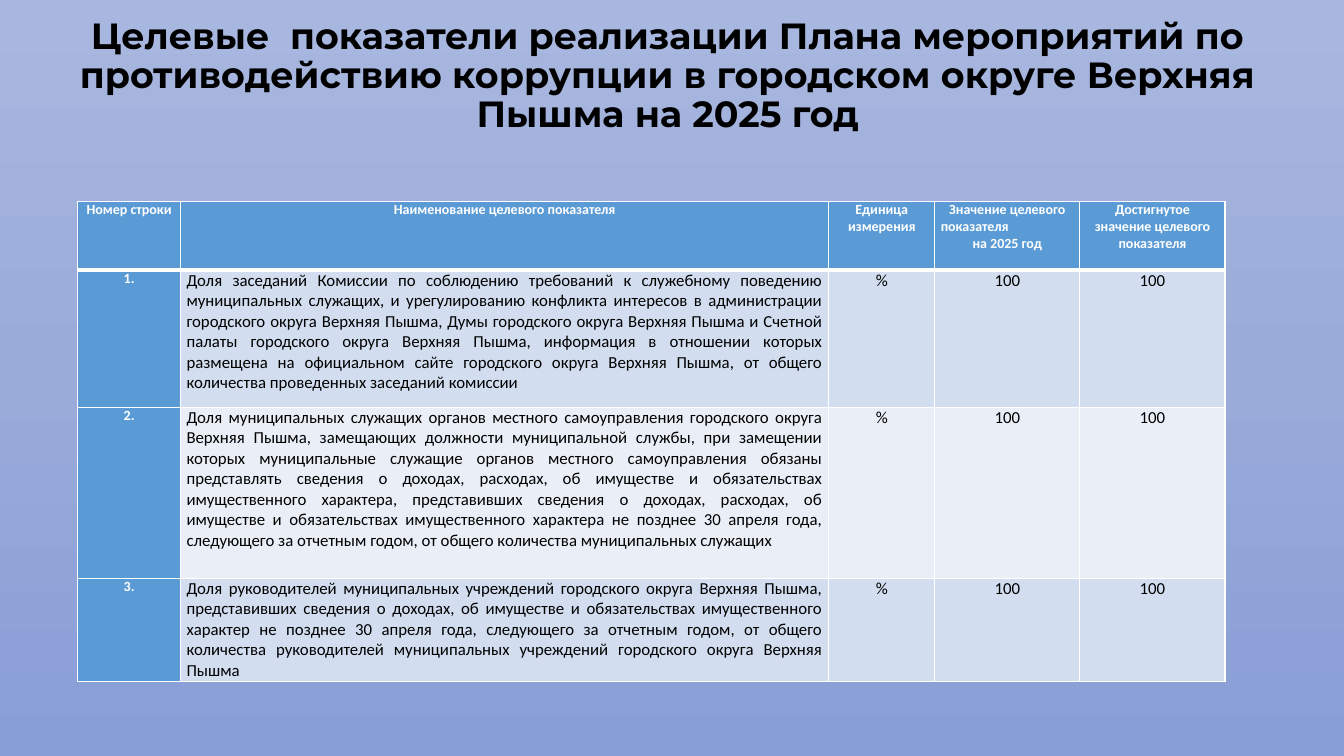
from copy import deepcopy

from lxml import etree
from pptx import Presentation
from pptx.dml.color import RGBColor
from pptx.enum.text import MSO_ANCHOR, MSO_AUTO_SIZE, PP_ALIGN
from pptx.oxml.ns import qn
from pptx.util import Inches, Pt

LEFT, CENTER, JUSTIFY = PP_ALIGN.LEFT, PP_ALIGN.CENTER, PP_ALIGN.JUSTIFY
MIDDLE, TOP = MSO_ANCHOR.MIDDLE, MSO_ANCHOR.TOP
NO_AUTOFIT = MSO_AUTO_SIZE.NONE

BLACK = RGBColor(0x00, 0x00, 0x00)
WHITE = RGBColor(0xFF, 0xFF, 0xFF)
BLUE = RGBColor(0x5B, 0x9B, 0xD5)
BAND_DARK = RGBColor(0xD2, 0xDE, 0xEF)
BAND_LIGHT = RGBColor(0xEA, 0xEF, 0xF7)
SKY = (RGBColor(0xA8, 0xB7, 0xDF), RGBColor(0x9A, 0xAB, 0xD9), RGBColor(0x88, 0x9E, 0xD7))

TITLE = ("Целевые  показатели реализации Плана мероприятий по противодействию "
         "коррупции в городском округе Верхняя Пышма на 2025 год")
HEADERS = [
    [("Номер строки", CENTER)],
    [("Наименование целевого показателя", CENTER)],
    [("Единица измерения", CENTER)],
    [("Значение целевого", CENTER), ("показателя", LEFT), ("на 2025 год", CENTER)],
    [("Достигнутое значение целевого показателя", CENTER)],
]
INDICATORS = [
    "Доля заседаний Комиссии по соблюдению требований к служебному поведению "
    "муниципальных служащих, и урегулированию конфликта интересов в администрации "
    "городского округа Верхняя Пышма, Думы городского округа Верхняя Пышма и Счетной "
    "палаты городского округа Верхняя Пышма, информация в отношении которых размещена "
    "на официальном сайте городского округа Верхняя Пышма, от общего количества "
    "проведенных заседаний комиссии",
    "Доля муниципальных служащих органов местного самоуправления городского округа "
    "Верхняя Пышма, замещающих должности муниципальной службы, при замещении которых "
    "муниципальные служащие органов местного самоуправления обязаны представлять "
    "сведения о доходах, расходах, об имуществе и обязательствах имущественного "
    "характера, представивших сведения о доходах, расходах, об имуществе и "
    "обязательствах имущественного характера не позднее 30 апреля года, следующего за "
    "отчетным годом, от общего количества муниципальных служащих",
    "Доля руководителей муниципальных учреждений городского округа Верхняя Пышма, "
    "представивших сведения о доходах, об имуществе и обязательствах имущественного "
    "характер не позднее 30 апреля года, следующего за отчетным годом, от общего "
    "количества руководителей муниципальных учреждений городского округа Верхняя Пышма",
]
COLUMNS = [7.65, 48.24, 7.88, 10.8, 10.8]
ROWS = [9.07, 18.13, 22.67, 13.6]


class Deck:
    formats = {
        "title": {"name": "Montserrat", "size": Pt(26), "bold": True},
        "head": {"name": "Calibri", "size": Pt(10), "bold": True},
        "body": {"name": "Calibri", "size": Pt(12), "bold": False},
    }
    colors = {"title": BLACK, "head": WHITE, "body": BLACK}
    frame = {"word_wrap": True, "auto_size": NO_AUTOFIT, "vertical_anchor": MIDDLE}
    cell_box = {"margin_left": Inches(0.06), "margin_right": Inches(0.06),
                "margin_top": 0, "margin_bottom": 0, "vertical_anchor": TOP}

    def __init__(self):
        self.prs = Presentation()
        self.prs.slide_width, self.prs.slide_height = Inches(13.33), Inches(7.5)
        self.s = self.prs.slides.add_slide(self.prs.slide_layouts[5])

    def x(self, percent):
        return round(self.prs.slide_width * percent / 100)

    def y(self, percent):
        return round(self.prs.slide_height * percent / 100)

    def apply(self, target, values):
        for key, value in values.items():
            setattr(target, key, value)

    def background(self, colors):
        fill = self.s.background.fill
        fill.gradient()
        fill.gradient_angle = 270
        stops = self.s.element.find(".//" + qn("a:gsLst"))
        stops.insert(1, deepcopy(stops[0]))
        for i, (stop, color) in enumerate(zip(fill.gradient_stops, colors)):
            self.apply(stop, {"position": i / (len(colors) - 1)})
            stop.color.rgb = color

    def text(self, tf, paragraphs, style, spacing=1.0):
        for i, (content, align) in enumerate(paragraphs):
            p = tf.add_paragraph() if i else tf.paragraphs[0]
            self.apply(p, {"alignment": align, "line_spacing": spacing})
            r = p.add_run()
            r.text = content
            self.apply(r.font, self.formats[style])
            r.font.color.rgb = self.colors[style]

    def title(self, content, left, top, width, height):
        sp = self.s.shapes.title
        self.apply(sp, {"left": self.x(left), "top": self.y(top),
                        "width": self.x(width), "height": self.y(height)})
        self.apply(sp.text_frame, self.frame)
        self.text(sp.text_frame, [(content, CENTER)], "title", 0.9)

    def border(self, cell, side, points):
        tc_pr = cell._tc.get_or_add_tcPr()
        ln = etree.SubElement(tc_pr, qn("a:ln" + side), w=str(Pt(points)))
        solid = etree.SubElement(ln, qn("a:solidFill"))
        etree.SubElement(solid, qn("a:srgbClr"), val=str(WHITE))

    def cell(self, cell, paragraphs, style, color, top, bottom):
        self.apply(cell, self.cell_box)
        for side, points in (("L", 1), ("R", 1), ("T", top), ("B", bottom)):
            self.border(cell, side, points)
        cell.fill.solid()
        cell.fill.fore_color.rgb = color
        self.text(cell.text_frame, paragraphs, style)

    def table(self, rows, left, top, widths, heights):
        table = self.s.shapes.add_table(
            len(heights), len(widths), self.x(left), self.y(top),
            self.x(sum(widths)), self.y(sum(heights))).table
        for column, width in zip(table.columns, widths):
            column.width = self.x(width)
        for row, height in zip(table.rows, heights):
            row.height = self.y(height)
        for i, row in enumerate(rows):
            band = BAND_DARK if i % 2 else BAND_LIGHT
            for j, paragraphs in enumerate(row):
                head = i == 0 or j == 0
                self.cell(table.cell(i, j), paragraphs, "head" if head else "body",
                          BLUE if head else band, 3 if i == 1 else 1, 3 if i == 0 else 1)


def main():
    deck = Deck()
    deck.background(SKY)
    deck.title(TITLE, 4.5, 3.2, 90.4, 13.87)
    rows = [HEADERS]
    for number, indicator in enumerate(INDICATORS, 1):
        rows.append([[(f"{number}.", CENTER)], [(indicator, JUSTIFY)], [("%", CENTER)],
                     [("100", CENTER)], [("100", CENTER)]])
    deck.table(rows, 5.78, 26.67, COLUMNS, ROWS)
    deck.prs.save("out.pptx")


if __name__ == "__main__":
    main()
